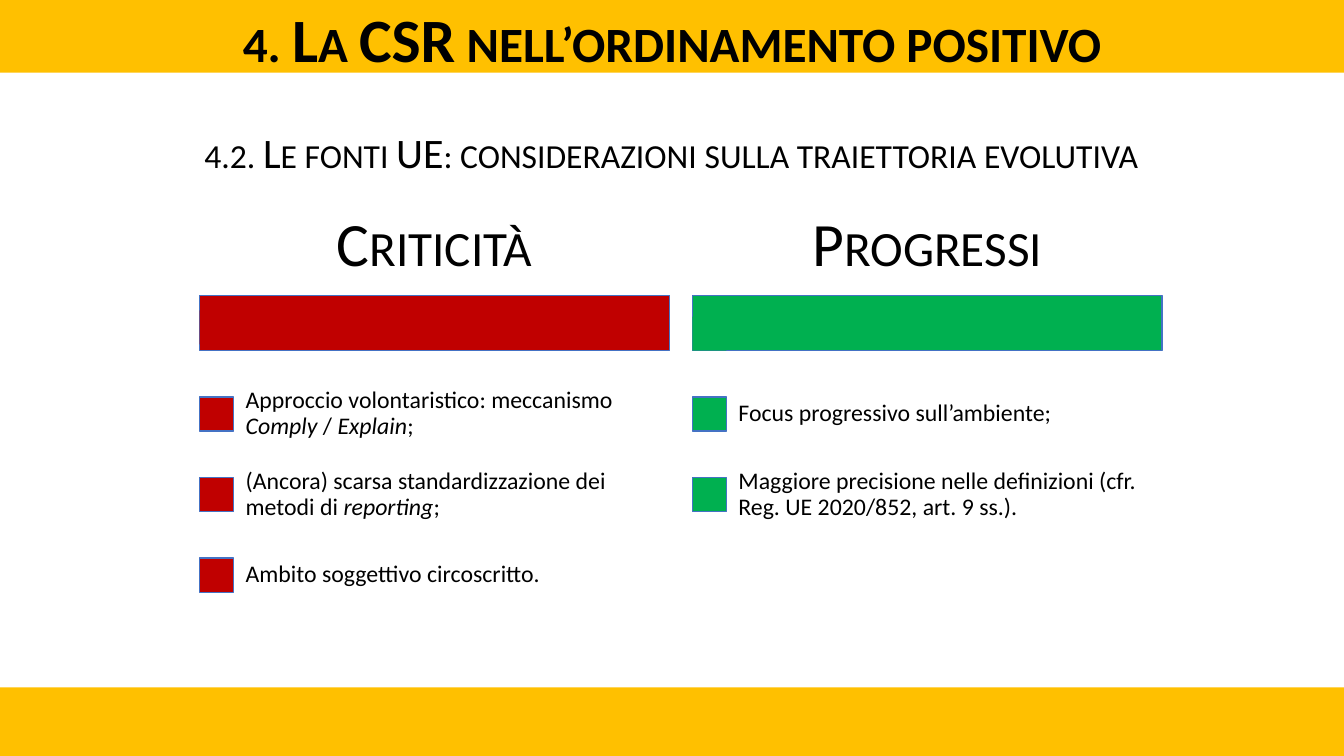
from lxml.etree import SubElement
from pptx import Presentation
from pptx.dml.color import RGBColor
from pptx.enum.shapes import MSO_SHAPE as Shape
from pptx.enum.text import MSO_ANCHOR as Anchor, MSO_AUTO_SIZE as Auto, PP_ALIGN as Align
from pptx.oxml.ns import qn
from pptx.util import Cm, Pt

GOLD, RED, GREEN, BLUE, BLACK = "FFC000", "C00000", "00B050", "4472C4", "000000"
WIDE, HIGH = 33.87, 19.05
COL, SIDE, STEP = 11.84, 0.86, 2.03

# Left edge, colour, top of the accent square, heading, points (*italic*)
COLUMNS = [
    (5.03, RED, 7.82, "Criticità", [
        "Approccio volontaristico: meccanismo *Comply* / *Explain*;",
        "(Ancora) scarsa standardizzazione dei metodi di *reporting*;",
        "Ambito soggettivo circoscritto.",
    ]),
    (17.45, GREEN, 7.98, "Progressi", [
        "Focus progressivo sull’ambiente;",
        "Maggiore precisione nelle definizioni (cfr. Reg. UE 2020/852, art. 9 ss.).",
    ]),
]


def paint(target, color):
    """Give a fill or a line one solid colour."""
    target.solid()
    target.fore_color.rgb = RGBColor.from_string(color)


def add_rect(slide, x, y, w, h, color, edge=None, alpha=None):
    box = slide.shapes.add_shape(Shape.RECTANGLE, Cm(x), Cm(y), Cm(w), Cm(h))
    box.shadow.inherit = False
    paint(box.fill, color)
    if edge:
        paint(box.line.fill, edge)
        box.line.width = Pt(1)
    else:
        box.line.fill.background()
    if alpha:
        tint = box.fill._xPr.find(qn("a:solidFill"))[0]
        SubElement(tint, qn("a:alpha"), val=str(alpha * 1000))


def write(box, text, size, inset, align=Align.CENTER, space=1.0,
          bold=False, caps=True, anchor=Anchor.MIDDLE):
    """Fill the box with one paragraph; inset is (sides, top and bottom)."""
    frame = box.text_frame
    frame.word_wrap = True
    frame.auto_size = Auto.NONE
    frame.vertical_anchor = anchor
    frame.margin_left = frame.margin_right = Cm(inset[0])
    frame.margin_top = frame.margin_bottom = Cm(inset[1])
    para = frame.paragraphs[0]
    para.alignment, para.line_spacing = align, space
    font = para.font
    font.name, font.size, font.bold = "Calibri", Pt(size), bold
    paint(font.fill, BLACK)
    if caps:
        font._rPr.set("cap", "small")
    for i, part in enumerate(text.split("*")):
        if part:
            run = para.add_run()
            run.text = part
            if i % 2:
                run.font.italic = True


def add_text(slide, x, y, w, h, *args, **style):
    box = slide.shapes.add_textbox(Cm(x), Cm(y), Cm(w), Cm(h))
    write(box, *args, **style)


def add_title(slide, text):
    title = slide.shapes.title
    title.left, title.top = Cm(0), Cm(0.2)
    title.width, title.height = Cm(WIDE), Cm(1.5)
    write(title, text, 44, (0.18, 0.1), bold=True)
    slide.shapes._spTree.append(title._element)  # in front of the band


def add_column(slide, x, color, accent, head, points):
    add_rect(slide, x, 7.44, COL, 1.4, color, BLUE)
    add_rect(slide, x, accent, SIDE, SIDE, color, alpha=90)
    add_text(slide, x, 4.95, COL, 2.51, head, 44, (0.23, 0.15), space=0.9)
    for i, point in enumerate(points):
        y = 9.42 + i * STEP
        add_rect(slide, x, y + (STEP - SIDE) / 2, SIDE, SIDE, color, BLUE)
        add_text(slide, x + 0.83, y, COL - 0.83, STEP, point, 17, (0.33, 0.33),
                 align=Align.LEFT, space=0.9, caps=False)


def main():
    deck = Presentation()
    deck.slide_width, deck.slide_height = Cm(WIDE), Cm(HIGH)
    slide = deck.slides.add_slide(deck.slide_layouts.get_by_name("Title Only"))
    add_rect(slide, 0, HIGH - 1.73, WIDE, 1.73, GOLD)
    add_rect(slide, 0, 0, WIDE, 1.83, GOLD)
    add_title(slide, "4. La CSR nell’ordinamento positivo")
    add_text(slide, 3.58, 3.07, 26.67, 1.55,
             "4.2. Le fonti UE: considerazioni sulla traiettoria evolutiva",
             30, (0.25, 0.13), anchor=Anchor.TOP)
    for column in COLUMNS:
        add_column(slide, *column)
    deck.save("out.pptx")


if __name__ == "__main__":
    main()
